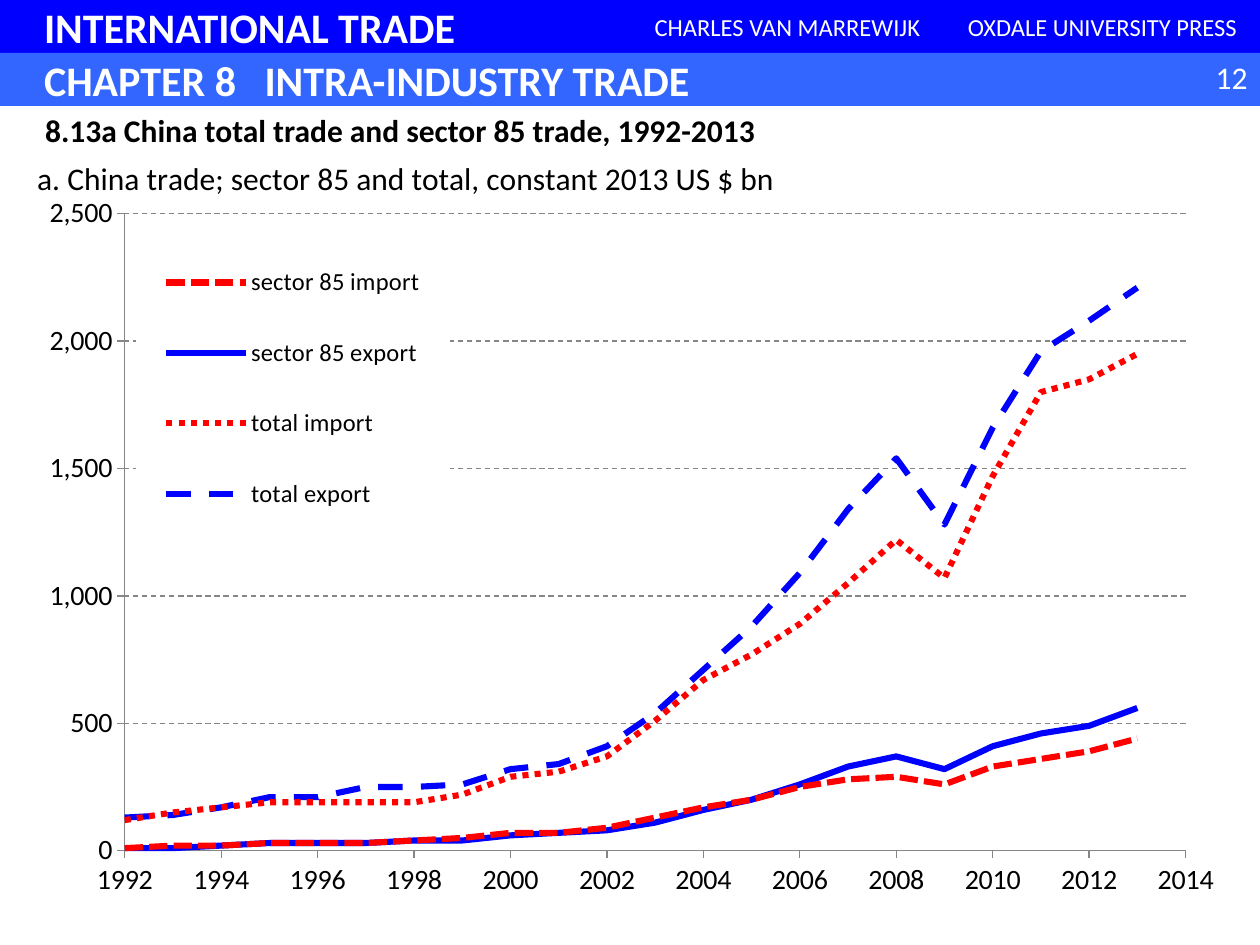
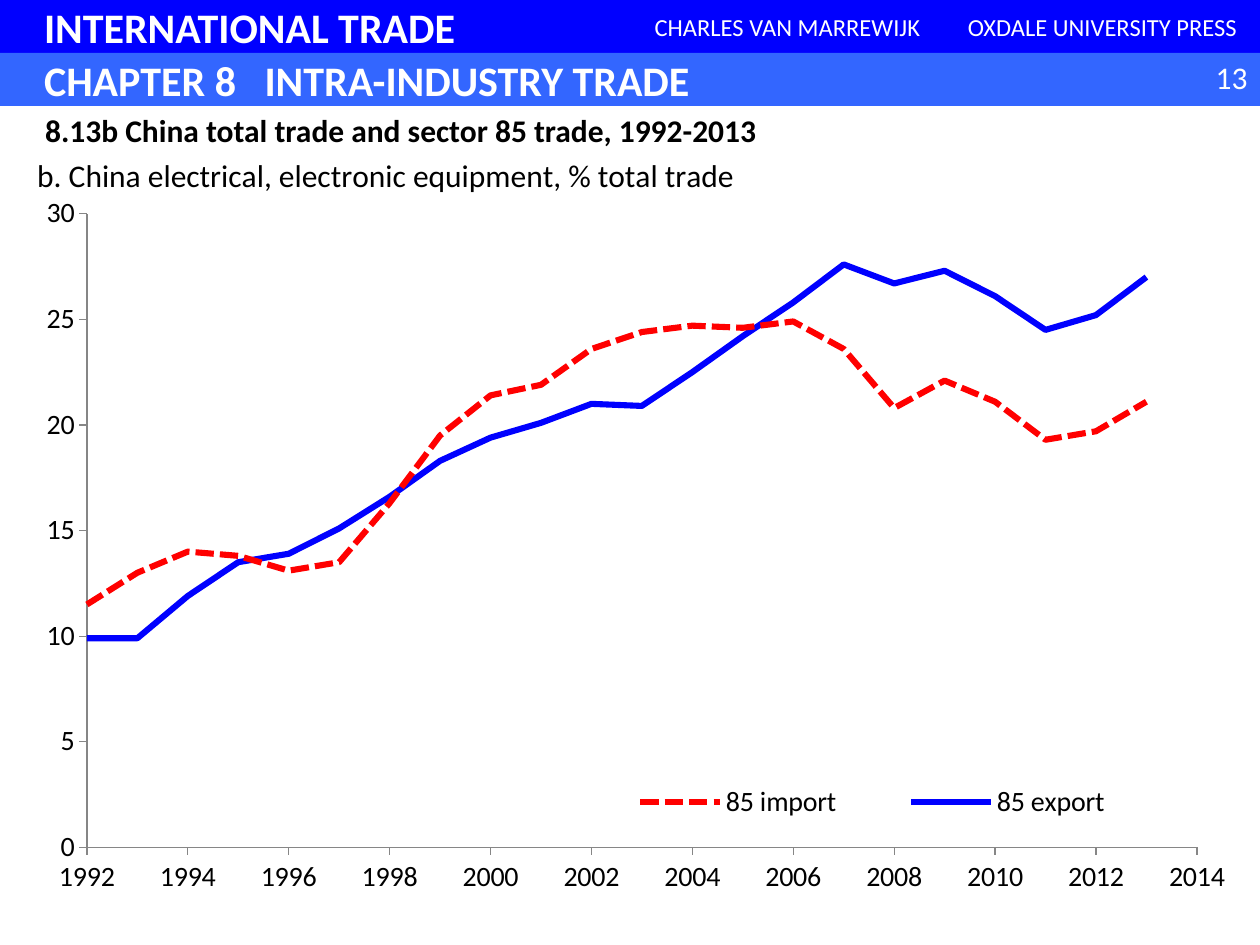
from lxml import etree
from pptx import Presentation
from pptx.chart.data import XyChartData
from pptx.dml.color import RGBColor
from pptx.enum.chart import XL_CHART_TYPE, XL_LEGEND_POSITION, XL_TICK_LABEL_POSITION, XL_TICK_MARK
from pptx.enum.dml import MSO_LINE
from pptx.enum.shapes import MSO_SHAPE
from pptx.enum.text import MSO_ANCHOR, PP_ALIGN
from pptx.oxml.ns import qn
from pptx.util import Inches, Pt

LEFT, CENTER, RIGHT = PP_ALIGN.LEFT, PP_ALIGN.CENTER, PP_ALIGN.RIGHT
MIDDLE = MSO_ANCHOR.MIDDLE
RECTANGLE = MSO_SHAPE.RECTANGLE
SCATTER_LINES = XL_CHART_TYPE.XY_SCATTER_LINES_NO_MARKERS
LEGEND_BOTTOM = XL_LEGEND_POSITION.BOTTOM
TICK_OUT, TICK_NONE = XL_TICK_MARK.OUTSIDE, XL_TICK_MARK.NONE
LABELS_LOW = XL_TICK_LABEL_POSITION.LOW
SOLID, DASH = MSO_LINE.SOLID, MSO_LINE.DASH
SHORT_DASH, DOT = MSO_LINE.SQUARE_DOT, MSO_LINE.ROUND_DOT

# Shared look
FONT = "Calibri"
BLUE, LIGHT_BLUE, RED = "0000FF", "3366FF", "FF0000"
WHITE, BLACK, GREY = "FFFFFF", "000000", "868686"
BAND_H = 0.42
BAND_INDENT = 0.35
YEARS = range(1992, 2014)

# Chart contents: name, colour, dash, values by year
TRADE_SERIES = [
    ("sector 85 import", RED, SHORT_DASH,
     [10, 20, 20, 30, 30, 30, 40, 50, 70, 70, 90,
      130, 170, 200, 250, 280, 290, 260, 330, 360, 390, 440]),
    ("sector 85 export", BLUE, SOLID,
     [10, 10, 20, 30, 30, 30, 40, 40, 60, 70, 80,
      110, 160, 200, 260, 330, 370, 320, 410, 460, 490, 560]),
    ("total import", RED, DOT,
     [120, 150, 170, 190, 190, 190, 190, 220, 290, 310, 370,
      510, 670, 770, 890, 1050, 1220, 1070, 1470, 1800, 1850, 1950]),
    ("total export", BLUE, DASH,
     [130, 140, 170, 210, 210, 250, 250, 260, 320, 340, 410,
      540, 710, 880, 1090, 1340, 1540, 1280, 1660, 1960, 2080, 2210]),
]
SHARE_SERIES = [
    ("85 import", RED, SHORT_DASH,
     [11.5, 13, 14, 13.8, 13.1, 13.5, 16.3, 19.5, 21.4, 21.9, 23.6,
      24.4, 24.7, 24.6, 24.9, 23.6, 20.8, 22.1, 21.1, 19.3, 19.7, 21.1]),
    ("85 export", BLUE, SOLID,
     [9.9, 9.9, 11.9, 13.5, 13.9, 15.1, 16.6, 18.3, 19.4, 20.1, 21,
      20.9, 22.5, 24.2, 25.8, 27.6, 26.7, 27.3, 26.1, 24.5, 25.2, 27]),
]


def rgb(hex_color):
    return RGBColor.from_string(hex_color)


def style_font(font, size, color, bold=False):
    font.name = FONT
    font.size = Pt(size)
    font.bold = bold
    font.color.rgb = rgb(color)


def write(sp, text, size, color, bold=False, align=LEFT):
    tf = sp.text_frame
    tf.word_wrap = True
    p = tf.paragraphs[0]
    p.text = text
    p.alignment = align
    for r in p.runs:
        style_font(r.font, size, color, bold)
    return p


def add_band(slide, x, y, w, color, text, size, bold=False, align=CENTER):
    sp = slide.shapes.add_shape(RECTANGLE, Inches(x), Inches(y), Inches(w), Inches(BAND_H))
    sp.shadow.inherit = False
    sp.fill.solid()
    sp.fill.fore_color.rgb = rgb(color)
    sp.line.fill.background()
    sp.text_frame.vertical_anchor = MIDDLE
    if align == LEFT:
        sp.text_frame.margin_left = Inches(BAND_INDENT)
    return write(sp, text, size, WHITE, bold, align)


def add_text(slide, x, y, w, text, color, bold=False, align=LEFT):
    sp = slide.shapes.add_textbox(Inches(x), Inches(y), Inches(w), Inches(0.4))
    write(sp, text, 18, color, bold, align)


def add_tab_stop(p, inches):
    tabs = etree.SubElement(p._p.get_or_add_pPr(), qn("a:tabLst"))
    etree.SubElement(tabs, qn("a:tab"), pos=str(Inches(inches)), algn="l")


def add_header(slide, number):
    add_band(slide, 0, 0, 10, BLUE, "INTERNATIONAL TRADE", 24, True, LEFT)
    add_band(slide, 5, 0, 2.5, BLUE, "CHARLES VAN MARREWIJK", 14)
    add_band(slide, 7.5, 0, 2.5, BLUE, "OXDALE UNIVERSITY PRESS", 14)
    chapter = add_band(slide, 0, BAND_H, 10, LIGHT_BLUE,
                       "CHAPTER 8\tINTRA-INDUSTRY TRADE", 24, True, LEFT)
    add_tab_stop(chapter, 1.75)
    add_text(slide, 9.33, 0.41, 0.67, str(number), WHITE, align=RIGHT)


def set_layout(element, inner=False, **fractions):
    """Place a chart part by fractions (x, y, w, h) of the chart area."""
    for old in element.findall(qn("c:layout")):
        element.remove(old)
    layout = etree.Element(qn("c:layout"))
    manual = etree.SubElement(layout, qn("c:manualLayout"))
    if inner:
        etree.SubElement(manual, qn("c:layoutTarget"), val="inner")
    for key in ("x", "y"):
        etree.SubElement(manual, qn(f"c:{key}Mode"), val="edge")
    for key, value in fractions.items():
        etree.SubElement(manual, qn(f"c:{key}"), val=str(value))
    overlay = element.find(qn("c:overlay"))
    if overlay is None:
        element.insert(0, layout)
    else:
        overlay.addprevious(layout)


def fill_legend_white(legend):
    sp_pr = etree.Element(qn("c:spPr"))
    fill = etree.SubElement(sp_pr, qn("a:solidFill"))
    etree.SubElement(fill, qn("a:srgbClr"), val=WHITE)
    legend._element.find(qn("c:overlay")).addnext(sp_pr)


def style_axis(axis, low, high, step, number_format):
    axis.minimum_scale, axis.maximum_scale, axis.major_unit = low, high, step
    axis.has_major_gridlines = False
    axis.major_tick_mark, axis.minor_tick_mark = TICK_OUT, TICK_NONE
    axis.tick_label_position = LABELS_LOW
    axis.tick_labels.number_format = number_format
    axis.tick_labels.number_format_is_linked = False
    style_font(axis.tick_labels.font, 16, BLACK)
    axis.format.line.color.rgb = rgb(GREY)
    axis.format.line.width = Pt(0.75)


def add_line_chart(slide, title, series, top, step, number_format,
                   title_at, plot_at, legend_at, legend_size, gridlines=False):
    data = XyChartData()
    for name, _, _, values in series:
        points = data.add_series(name)
        for year, value in zip(YEARS, values):
            points.add_data_point(year, value)
    chart = slide.shapes.add_chart(SCATTER_LINES, Inches(0), Inches(0.83),
                                   Inches(10), Inches(6.67), data).chart
    style_font(chart.font, 10, BLACK)

    # Lines
    plot = chart.plots[0]
    plot.vary_by_categories = False
    for line, (_, color, dash, _) in zip(plot.series, series):
        line.smooth = False
        line.format.line.color.rgb = rgb(color)
        line.format.line.width = Pt(3.5)
        line.format.line.dash_style = dash

    # Axes
    style_axis(chart.category_axis, 1992, 2014, 2, "0")
    style_axis(chart.value_axis, 0, top, step, number_format)
    if gridlines:
        chart.value_axis.has_major_gridlines = True
        grid = chart.value_axis.major_gridlines.format.line
        grid.color.rgb = rgb(GREY)
        grid.width = Pt(0.75)
        grid.dash_style = DASH

    # Title, legend and plot area
    chart.has_title = True
    heading = chart.chart_title
    heading.text_frame.text = title
    style_font(heading.text_frame.paragraphs[0].runs[0].font, 18, BLACK)
    heading._element.find(qn("c:overlay")).set("val", "1")
    set_layout(heading._element, **title_at)

    chart.has_legend = True
    legend = chart.legend
    legend.position = LEGEND_BOTTOM
    legend.include_in_layout = False
    style_font(legend.font, legend_size, BLACK)
    set_layout(legend._element, **legend_at)
    fill_legend_white(legend)
    set_layout(chart._chartSpace.chart.plotArea, inner=True, **plot_at)


def add_chart_slide(prs, number, heading, **chart):
    slide = prs.slides.add_slide(prs.slide_layouts[6])
    add_header(slide, number)
    add_line_chart(slide, **chart)
    add_text(slide, 0.26, 0.83, 6.3, heading, BLACK, bold=True)


def main():
    prs = Presentation()
    prs.slide_width, prs.slide_height = Inches(10), Inches(7.5)

    # Trade values
    add_chart_slide(
        prs, 12, "8.13a China total trade and sector 85 trade, 1992-2013",
        title="a. China trade; sector 85 and total, constant 2013 US $ bn",
        series=TRADE_SERIES, top=2500, step=500, number_format="#,##0",
        title_at=dict(x=0.025, y=0.055),
        plot_at=dict(x=0.099, y=0.13, w=0.842, h=0.758),
        legend_at=dict(x=0.108, y=0.146, w=0.249, h=0.383),
        legend_size=14, gridlines=True)

    # Shares of total trade
    add_chart_slide(
        prs, 13, "8.13b China total trade and sector 85 trade, 1992-2013",
        title="b. China electrical, electronic equipment, % total trade",
        series=SHARE_SERIES, top=30, step=5, number_format="0",
        title_at=dict(x=0.025, y=0.052),
        plot_at=dict(x=0.069, y=0.13, w=0.881, h=0.754),
        legend_at=dict(x=0.456, y=0.8, w=0.473, h=0.06),
        legend_size=16)

    prs.save("out.pptx")


if __name__ == "__main__":
    main()
